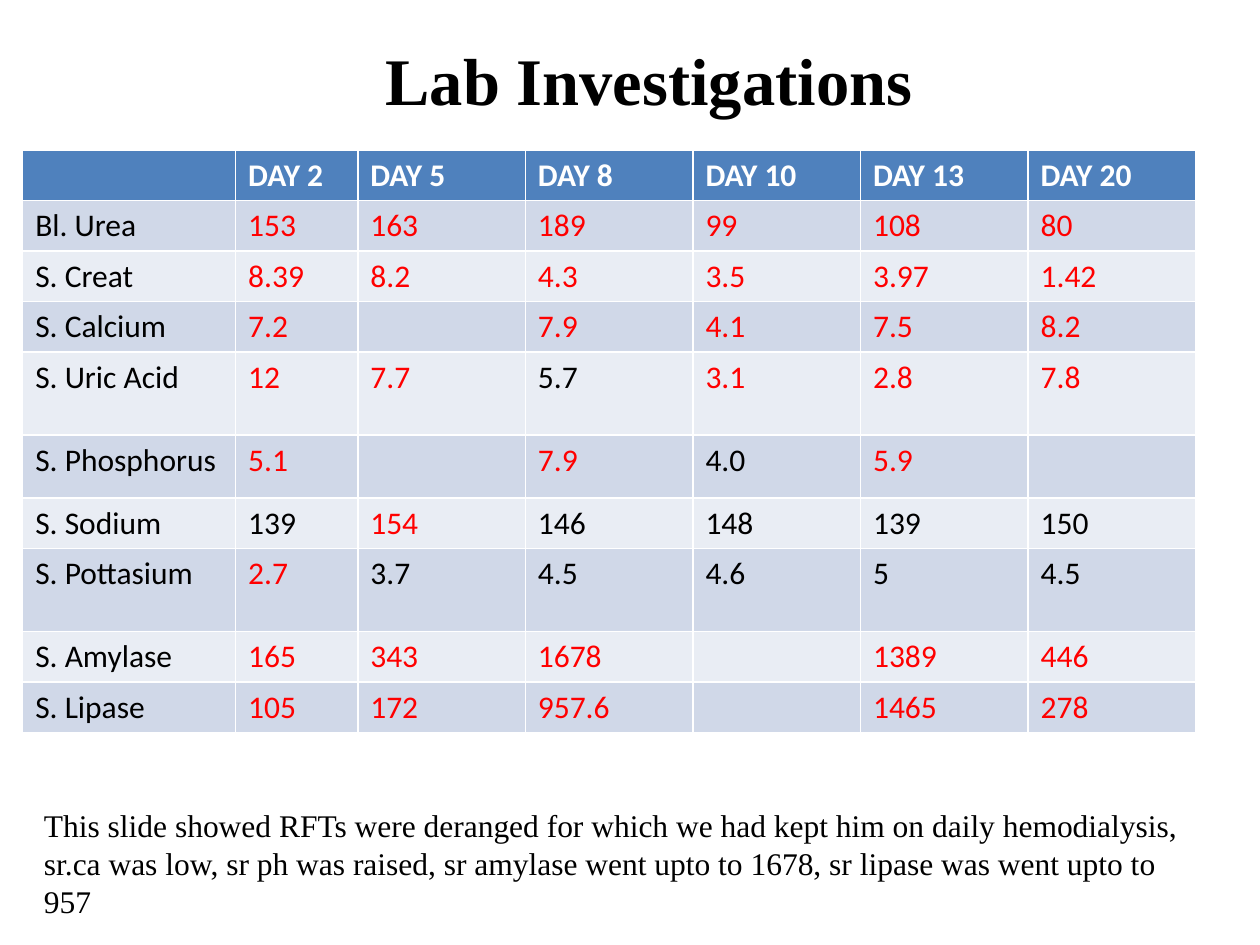
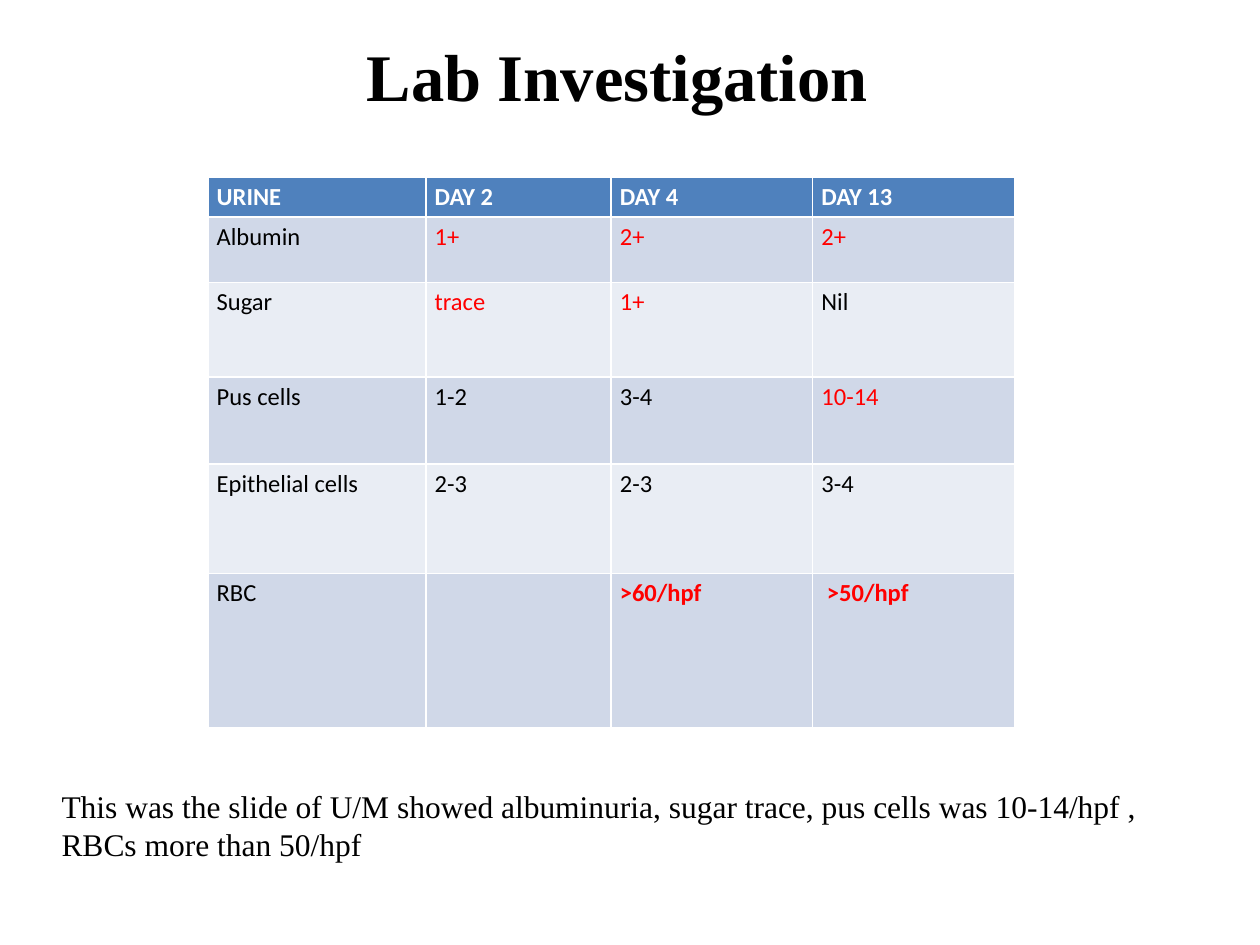
from pptx import Presentation
from pptx.dml.color import RGBColor
from pptx.enum.text import MSO_ANCHOR, MSO_AUTO_SIZE, PP_ALIGN
from pptx.util import Inches, Pt

# Shared look
HEADER, BAND_DARK, BAND_LIGHT = "4F81BD", "D0D8E8", "E9EDF4"
BLACK, WHITE, ABNORMAL = "000000", "FFFFFF", "FF0000"
SERIF, SANS = "Times New Roman", "Calibri"

deck = Presentation()
deck.slide_width, deck.slide_height = Inches(10), Inches(7.5)
# Square grid: 100 columns by 75 rows
UNIT = deck.slide_width / 100


def color(hex_string):
    return RGBColor.from_string(hex_string)


def write(frame, text, font_name, size, hue, bold=False):
    paragraph = frame.paragraphs[0]
    paragraph.alignment = PP_ALIGN.LEFT
    run = paragraph.add_run()
    run.text = text
    run.font.name, run.font.size, run.font.bold = font_name, Pt(size), bold
    run.font.color.rgb = color(hue)


# Values out of range start with "!", the most striking ones with "!!"
blood_results = [
    ["", "DAY 2", "DAY 5", "DAY 8", "DAY 10", "DAY 13", "DAY 20"],
    ["Bl. Urea", "!153", "!163", "!189", "!99", "!108", "!80"],
    ["S. Creat", "!8.39", "!8.2", "!4.3", "!3.5", "!3.97", "!1.42"],
    ["S. Calcium", "!7.2", "", "!7.9", "!4.1", "!7.5", "!8.2"],
    ["S. Uric Acid", "!12", "!7.7", "5.7", "!3.1", "!2.8", "!7.8"],
    ["S. Phosphorus", "!5.1", "", "!7.9", "4.0", "!5.9", ""],
    ["S. Sodium", "139", "!154", "146", "148", "139", "150"],
    ["S. Pottasium", "!2.7", "3.7", "4.5", "4.6", "5", "4.5"],
    ["S. Amylase", "!165", "!343", "!1678", "", "!1389", "!446"],
    ["S. Lipase", "!105", "!172", "!957.6", "", "!1465", "!278"],
]
urine_results = [
    ["URINE", "DAY 2", "DAY 4", "DAY 13"],
    ["Albumin", "!1+", "!2+", "!2+"],
    ["Sugar", "!trace", "!1+", "Nil"],
    ["Pus cells", "1-2", "3-4", "!10-14"],
    ["Epithelial cells", "2-3", "2-3", "3-4"],
    ["RBC", "", "!!>60/hpf", "!! >50/hpf"],
]

# Boxes are left, top, width, height in grid units
investigations = [
    dict(
        title="Lab Investigations", title_box=(29.6, 2.6, 60.8, 7.4),
        results=blood_results, table_box=(1.8, 11.9, 93.2, 46.2),
        columns=[16.9, 9.7] + [13.3] * 5,
        rows=[3.8] * 4 + [6.6, 5, 3.8, 6.6, 3.8, 3.8],
        size=18, margins=(1, 0.5),
        finding="This slide showed RFTs were deranged for which we had kept him "
                "on daily hemodialysis, sr.ca was low, sr ph was raised, sr amylase "
                "went upto to 1678, sr lipase was went upto to 957",
        finding_box=(2.5, 63.5, 93.2, 10.1),
    ),
    dict(
        title="Lab Investigation", title_box=(28.1, 2.3, 48.4, 7.4),
        results=urine_results, table_box=(16.5, 14.1, 63.9, 43.5),
        columns=[17.3, 14.7, 16, 16],
        rows=[3, 5.2, 7.5, 6.9, 8.7, 12.2],
        size=14, margins=(0.7, 0.4),
        finding="This was the slide of U/M showed albuminuria, sugar trace, "
                "pus cells was 10-14/hpf , RBCs more than 50/hpf",
        finding_box=(3.9, 62, 93.7, 7.1),
    ),
]

for investigation in investigations:
    slide = deck.slides.add_slide(deck.slide_layouts[5])
    title_box, table_box, finding_box = (
        [round(length * UNIT) for length in investigation[part]]
        for part in ("title_box", "table_box", "finding_box"))

    # Title
    title = slide.shapes.title
    title.left, title.top, title.width, title.height = title_box
    title.text_frame.vertical_anchor = MSO_ANCHOR.TOP
    title.text_frame.auto_size = MSO_AUTO_SIZE.SHAPE_TO_FIT_TEXT
    write(title.text_frame, investigation["title"], SERIF, 38, BLACK, bold=True)

    # Results table
    results = investigation["results"]
    table = slide.shapes.add_table(len(results), len(results[0]), *table_box).table
    for column, width in zip(table.columns, investigation["columns"]):
        column.width = round(width * UNIT)
    for row, height in zip(table.rows, investigation["rows"]):
        row.height = round(height * UNIT)
    side, edge = (round(margin * UNIT) for margin in investigation["margins"])
    for r, values in enumerate(results):
        band = HEADER if r == 0 else BAND_DARK if r % 2 else BAND_LIGHT
        for c, value in enumerate(values):
            cell = table.cell(r, c)
            cell.fill.solid()
            cell.fill.fore_color.rgb = color(band)
            cell.margin_left = cell.margin_right = side
            cell.margin_top = cell.margin_bottom = edge
            if value:
                hue = WHITE if r == 0 else ABNORMAL if value.startswith("!") else BLACK
                write(cell.text_frame, value.lstrip("!"), SANS, investigation["size"],
                      hue, bold=r == 0 or value.startswith("!!"))

    # Finding below the table
    finding = slide.shapes.add_textbox(*finding_box).text_frame
    finding.word_wrap = True
    finding.auto_size = MSO_AUTO_SIZE.SHAPE_TO_FIT_TEXT
    write(finding, investigation["finding"], SERIF, 18, BLACK)

deck.save("out.pptx")
